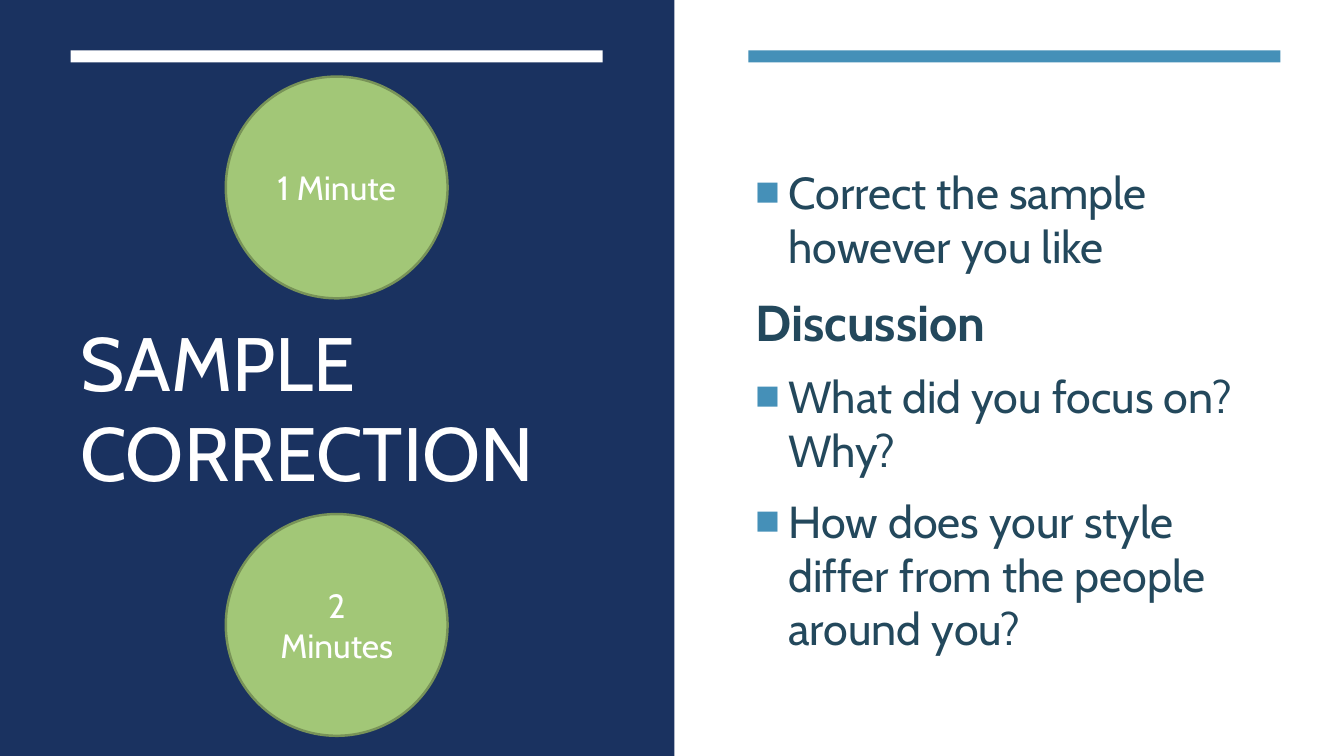
from dataclasses import dataclass

from lxml.etree import SubElement
from pptx import Presentation
from pptx.dml.color import RGBColor
from pptx.enum.shapes import MSO_SHAPE
from pptx.enum.text import MSO_ANCHOR, PP_ALIGN
from pptx.oxml.ns import qn
from pptx.util import Inches, Pt


@dataclass(frozen=True)
class Theme:
    font: str = "Cabin"
    white: str = "FFFFFF"
    navy: str = "1A3260"
    blue: str = "4590B8"
    text: str = "23485C"
    green: str = "A2C777"
    green_edge: str = "789358"
    title_size: int = 54
    heading_size: int = 36
    body_size: int = 32
    timer_size: int = 24


THEME = Theme()
SLIDE_WIDTH, SLIDE_HEIGHT = Inches(13.33), Inches(7.5)
COLUMNS, ROWS = 40, 30
PANEL_COLUMNS = 20.07
BAR_LEFT, BAR_COLUMNS = 2.1, 15.84
CIRCLE_COLUMNS, CIRCLE_ROWS = 6.6, 8.8
BULLET_INDENT = Inches(0.33)


def place(left, top, width, height):
    """Turn grid columns and rows into slide lengths."""
    column, row = SLIDE_WIDTH / COLUMNS, SLIDE_HEIGHT / ROWS
    return [round(length) for length in
            (left * column, top * row, width * column, height * row)]


def add_filled_shape(slide, kind, area, color, edge=None):
    shape = slide.shapes.add_shape(kind, *place(*area))
    shape.shadow.inherit = False
    shape.fill.solid()
    shape.fill.fore_color.rgb = RGBColor.from_string(color)
    if edge:
        shape.line.color.rgb = RGBColor.from_string(edge)
        shape.line.width = Pt(1.75)
    else:
        shape.line.fill.background()
    return shape


def add_text_box(slide, area):
    text_frame = slide.shapes.add_textbox(*place(*area)).text_frame
    text_frame.word_wrap = True
    text_frame.vertical_anchor = MSO_ANCHOR.MIDDLE
    return text_frame


def style(paragraph, size, color, bold=False):
    font = paragraph.font
    for target in (font, *(run.font for run in paragraph.runs)):
        target.name = THEME.font
        target.size = Pt(size)
        target.bold = bold
        target.color.rgb = RGBColor.from_string(color)


def add_square_bullet(paragraph):
    properties = paragraph._p.get_or_add_pPr()
    properties.set("marL", str(BULLET_INDENT))
    properties.set("indent", str(-BULLET_INDENT))
    bullet_color = SubElement(properties, qn("a:buClr"))
    SubElement(bullet_color, qn("a:srgbClr"), val=THEME.blue)
    SubElement(properties, qn("a:buSzPct"), val="92000")
    SubElement(properties, qn("a:buFont"), typeface="Arial")
    SubElement(properties, qn("a:buChar"), char="■")


def add_title(slide, text):
    text_frame = add_text_box(slide, (BAR_LEFT, 5.56, BAR_COLUMNS, 21.12))
    text_frame.text = text
    style(text_frame.paragraphs[0], THEME.title_size, THEME.white)


def add_timer(slide, top, text):
    left = BAR_LEFT + (BAR_COLUMNS - CIRCLE_COLUMNS) / 2
    circle = add_filled_shape(slide, MSO_SHAPE.OVAL,
                              (left, top, CIRCLE_COLUMNS, CIRCLE_ROWS),
                              THEME.green, THEME.green_edge)
    text_frame = circle.text_frame
    text_frame.margin_left = text_frame.margin_right = Inches(0.15)
    text_frame.word_wrap = True
    text_frame.vertical_anchor = MSO_ANCHOR.MIDDLE
    text_frame.text = text
    paragraph = text_frame.paragraphs[0]
    paragraph.alignment = PP_ALIGN.CENTER
    style(paragraph, THEME.timer_size, THEME.white)


def add_body(slide, entries):
    text_frame = add_text_box(slide, (22.18, 4.52, 15.93, 23.48))
    for index, (text, is_heading) in enumerate(entries):
        paragraph = text_frame.add_paragraph() if index else text_frame.paragraphs[0]
        paragraph.text = text
        size = THEME.heading_size if is_heading else THEME.body_size
        paragraph.space_before = Pt(0.2 * size if index else 0)
        paragraph.space_after = Pt(6)
        if not is_heading:
            add_square_bullet(paragraph)
        style(paragraph, size, THEME.text, bold=is_heading)


def main():
    presentation = Presentation()
    presentation.slide_width = SLIDE_WIDTH
    presentation.slide_height = SLIDE_HEIGHT
    slide = presentation.slides.add_slide(presentation.slide_layouts[6])

    # Background and left panel
    for width, color in ((COLUMNS, THEME.white), (PANEL_COLUMNS, THEME.navy)):
        add_filled_shape(slide, MSO_SHAPE.RECTANGLE, (0, 0, width, ROWS), color)

    # Accent bars above both halves
    for left, color in ((BAR_LEFT, THEME.white), (22.27, THEME.blue)):
        add_filled_shape(slide, MSO_SHAPE.RECTANGLE,
                         (left, 2, BAR_COLUMNS, 0.48), color)

    # Title and instructions
    add_title(slide, "SAMPLE CORRECTION")
    add_body(slide, [
        ("Correct the sample however you like", False),
        ("Discussion", True),
        ("What did you focus on? Why?", False),
        ("How does your style differ from the people around you?", False),
    ])

    # Time limits
    for top, text in ((3.04, "1 Minute"), (20.4, "2 Minutes")):
        add_timer(slide, top, text)

    presentation.save("out.pptx")


if __name__ == "__main__":
    main()
